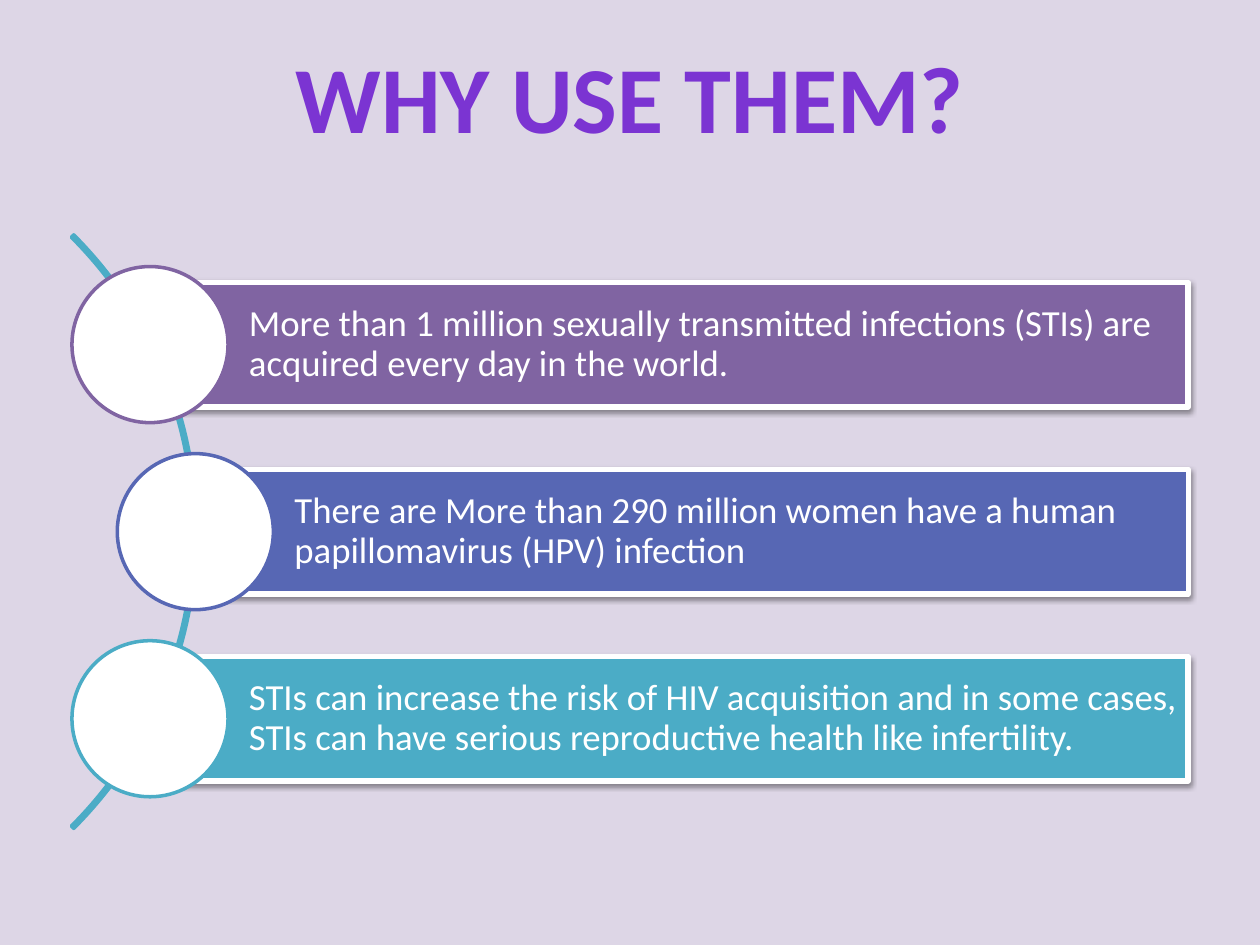
import pptx
import pptx.dml.color
import pptx.enum.shapes
import pptx.enum.text
import pptx.oxml
import pptx.util
from dataclasses import dataclass

Pt = pptx.util.Pt
Color = pptx.dml.color.RGBColor.from_string
Shape = pptx.enum.shapes.MSO_SHAPE
Align = pptx.enum.text.PP_ALIGN
Anchor = pptx.enum.text.MSO_ANCHOR


@dataclass
class Theme:
    font: str = "Calibri"
    title_size: int = 54
    fact_size: int = 21
    background: str = "DDD6E6"
    title: str = "7B34D2"
    white: str = "FFFFFF"
    purple: str = "8064A2"
    blue: str = "5767B4"
    teal: str = "4BACC6"


theme = Theme()

SHADOW = (
    '<a:effectLst xmlns:a="http://schemas.openxmlformats.org/drawingml/2006/main">'
    f'<a:outerShdw blurRad="{Pt(3.1)}" dist="{Pt(1.6)}" dir="5400000" rotWithShape="0">'
    '<a:srgbClr val="000000"><a:alpha val="38000"/></a:srgbClr>'
    "</a:outerShdw></a:effectLst>"
)


def add_part(kind, left, top, width, height, fill, line, weight):
    part = slide.shapes.add_shape(kind, Pt(left), Pt(top), Pt(width), Pt(height))
    part.shadow.inherit = False
    if fill:
        part.fill.solid()
        part.fill.fore_color.rgb = Color(fill)
    else:
        part.fill.background()
    part.line.color.rgb = Color(line)
    part.line.width = Pt(weight)
    return part


def add_text(paragraph, text, size, color, bold=False):
    run = paragraph.add_run()
    run.text = text
    run.font.name = theme.font
    run.font.size = Pt(size)
    run.font.bold = bold
    run.font.color.rgb = Color(color)


# Slide and background
deck = pptx.Presentation()
deck.slide_width, deck.slide_height = Pt(720), Pt(540)
slide = deck.slides.add_slide(deck.slide_layouts[5])
slide.background.fill.solid()
slide.background.fill.fore_color.rgb = Color(theme.background)

# Title
title = slide.shapes.title
title.left, title.top, title.width, title.height = Pt(160), Pt(18.7), Pt(400), Pt(73)
title.text_frame.word_wrap = False
title.text_frame.auto_size = pptx.enum.text.MSO_AUTO_SIZE.SHAPE_TO_FIT_TEXT
title.text_frame.vertical_anchor = Anchor.TOP
heading = title.text_frame.paragraphs[0]
heading.alignment = Align.CENTER
add_text(heading, "WHY USE THEM?", theme.title_size, theme.title, bold=True)

# Arc behind the facts
middle = 303.8
arc_size = 479.6
arc = add_part(Shape.BLOCK_ARC, -367.2, middle - arc_size / 2, arc_size, arc_size,
               None, theme.teal, 2)
for index, value in enumerate((189, 27, 0.004)):  # 315° to 45°, hairline band
    arc.adjustments[index] = value

# Facts: a bar starting at the centre of its circle
facts = [
    ("More than 1 million sexually transmitted infections (STIs) are "
     "acquired every day in the world.", theme.purple, 85.7),
    ("There are More than 290 million women have a human "
     "papillomavirus (HPV) infection", theme.blue, 111.6),
    ("STIs can increase the risk of HIV acquisition and in some cases, "
     "STIs can have serious reproductive health like infertility.", theme.teal, 85.7),
]
pitch, bar_height, bar_right, diameter = 106.9, 71.3, 679, 89.2

for row, (fact, color, left) in enumerate(facts):
    center = middle + (row - 1) * pitch
    bar = add_part(Shape.RECTANGLE, left, center - bar_height / 2,
                   bar_right - left, bar_height, color, theme.white, 3)
    properties = bar.fill._xPr
    properties.remove(properties.find(pptx.oxml.ns.qn("a:effectLst")))
    properties.append(pptx.oxml.parse_xml(SHADOW))

    frame = bar.text_frame
    frame.word_wrap = True
    frame.vertical_anchor = Anchor.MIDDLE
    frame.margin_left = Pt(56.6)
    frame.margin_top = frame.margin_right = frame.margin_bottom = Pt(4.2)
    paragraph = frame.paragraphs[0]
    paragraph.alignment = Align.LEFT
    paragraph.line_spacing = 0.9
    add_text(paragraph, fact, theme.fact_size, theme.white)

    add_part(Shape.OVAL, left - diameter / 2, center - diameter / 2,
             diameter, diameter, theme.white, color, 2)

deck.save("out.pptx")
